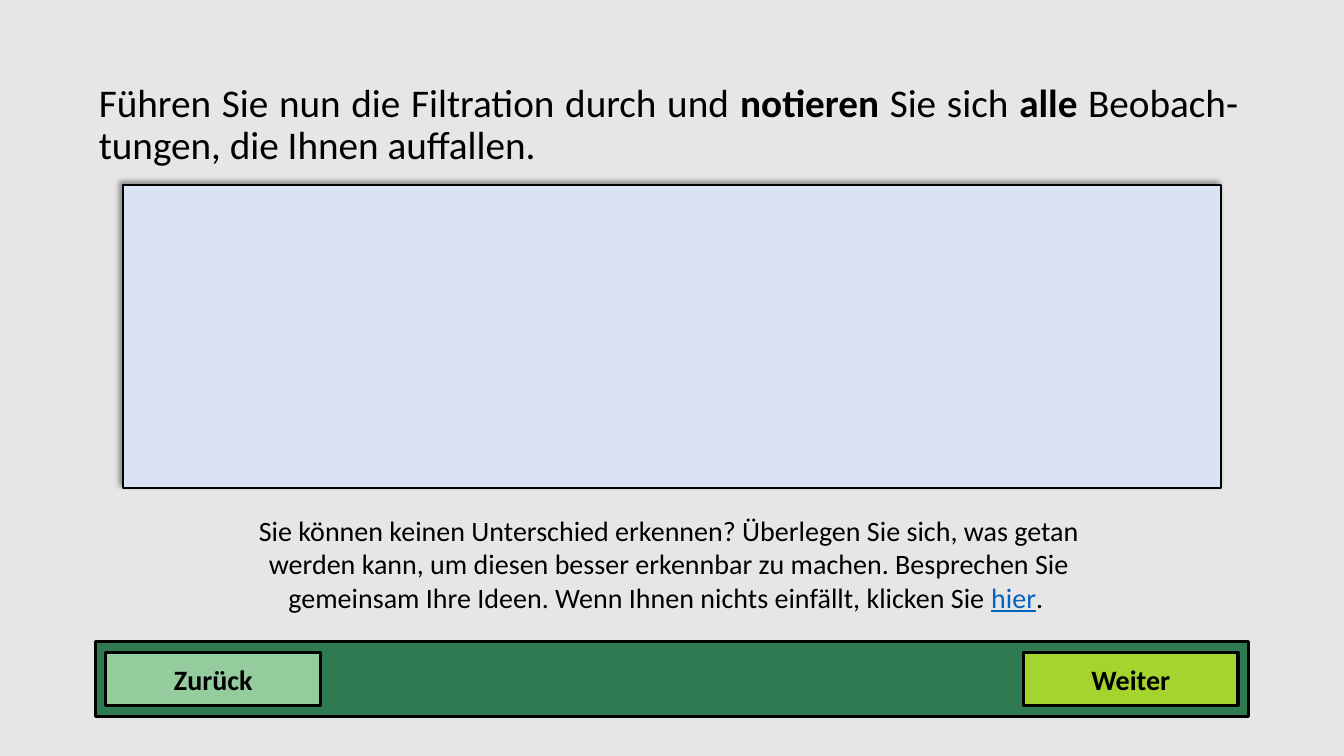
from lxml import etree
from pptx import Presentation
from pptx.dml.color import RGBColor
from pptx.enum.shapes import MSO_SHAPE
from pptx.enum.text import MSO_ANCHOR, MSO_AUTO_SIZE, PP_ALIGN
from pptx.oxml import parse_xml
from pptx.oxml.ns import nsdecls, qn
from pptx.util import Inches, Pt

COLORS = {
    "background": "E7E6E6",
    "ink": "000000",
    "bar": "307A52",
    "back": "94CC9E",
    "next": "A6D42E",
    "notes": "DAE3F3",
    "link": "0563C1",
}
FONT = "Calibri"


def color(name):
    return RGBColor.from_string(COLORS[name])


def add_run(paragraph, text, size, ink="ink", bold=False, underline=False):
    run = paragraph.add_run()
    run.text = text
    font = run.font
    font.name, font.size = FONT, Pt(size)
    font.bold, font.underline = bold, underline
    font.color.rgb = color(ink)


def add_panel(slide, box, fill, line_width):
    panel = slide.shapes.add_shape(MSO_SHAPE.RECTANGLE, *map(Inches, box))
    panel.shadow.inherit = False
    panel.fill.solid()
    panel.fill.fore_color.rgb = color(fill)
    panel.line.color.rgb = color("ink")
    panel.line.width = Pt(line_width)
    return panel


def fill_task(slide, box):
    task = slide.placeholders[1]
    task.left, task.top, task.width, task.height = map(Inches, box)
    frame = task.text_frame
    frame.word_wrap = True
    frame.auto_size = MSO_AUTO_SIZE.NONE
    frame.vertical_anchor = MSO_ANCHOR.TOP
    sentence = frame.paragraphs[0]
    sentence.alignment = PP_ALIGN.JUSTIFY
    sentence.line_spacing = 0.9
    sentence.space_before = Pt(10)
    properties = sentence._p.get_or_add_pPr()
    properties.set("marL", "0")
    properties.set("indent", "0")
    etree.SubElement(properties, qn("a:buNone"))
    for text, bold in (
        ("Führen Sie nun die Filtration durch und ", False),
        ("notieren", True),
        (" Sie sich ", False),
        ("alle", True),
        (" Beobach-tungen, die Ihnen auffallen.", False),
    ):
        add_run(sentence, text, 28, bold=bold)


def add_navigation(slide, box):
    left, top, width, height = box
    add_panel(slide, box, "bar", 2.25)
    button_width, button_height, margin = 2.13, 0.52, 0.1
    button_top = top + (height - button_height) / 2
    for label, fill, button_left in (
        ("Zurück", "back", left + margin),
        ("Weiter", "next", left + width - margin - button_width),
    ):
        button = add_panel(
            slide, (button_left, button_top, button_width, button_height), fill, 2.25
        )
        button.text_frame.vertical_anchor = MSO_ANCHOR.MIDDLE
        caption = button.text_frame.paragraphs[0]
        caption.alignment = PP_ALIGN.CENTER
        add_run(caption, label, 20, bold=True)


def add_notes_field(slide, box):
    field = add_panel(slide, box, "notes", 1.5)
    effects = field._element.spPr.find(qn("a:effectLst"))
    effects.append(parse_xml(
        f'<a:outerShdw {nsdecls("a")} blurRad="{Pt(4)}" dist="{Pt(3)}" '
        'dir="13500000" algn="br" rotWithShape="0">'
        f'<a:srgbClr val="{COLORS["ink"]}"><a:alpha val="40000"/></a:srgbClr>'
        '</a:outerShdw>'
    ))


def add_hint(slide, box):
    frame = slide.shapes.add_textbox(*map(Inches, box)).text_frame
    frame.word_wrap = True
    frame.auto_size = MSO_AUTO_SIZE.SHAPE_TO_FIT_TEXT
    hint = frame.paragraphs[0]
    hint.alignment = PP_ALIGN.CENTER
    add_run(
        hint,
        "Sie können keinen Unterschied erkennen? Überlegen Sie sich, was getan "
        "werden kann, um diesen besser erkennbar zu machen. Besprechen Sie "
        "gemeinsam Ihre Ideen. Wenn Ihnen nichts einfällt, klicken Sie ",
        20,
    )
    add_run(hint, "hier", 20, ink="link", underline=True)
    add_run(hint, ". ", 20)


def main():
    presentation = Presentation()
    presentation.slide_width = Inches(13.33)
    presentation.slide_height = Inches(7.5)
    slide = presentation.slides.add_slide(presentation.slide_layouts[1])
    slide.background.fill.solid()
    slide.background.fill.fore_color.rgb = color("background")
    heading = slide.shapes.title._element
    heading.getparent().remove(heading)

    fill_task(slide, (0.88, 0.78, 11.5, 5.17))
    add_navigation(slide, (0.95, 6.36, 11.43, 0.75))
    add_notes_field(slide, (1.22, 1.84, 10.89, 3))
    add_hint(slide, (2.38, 5.04, 8.51, 1.11))
    presentation.save("out.pptx")


if __name__ == "__main__":
    main()
